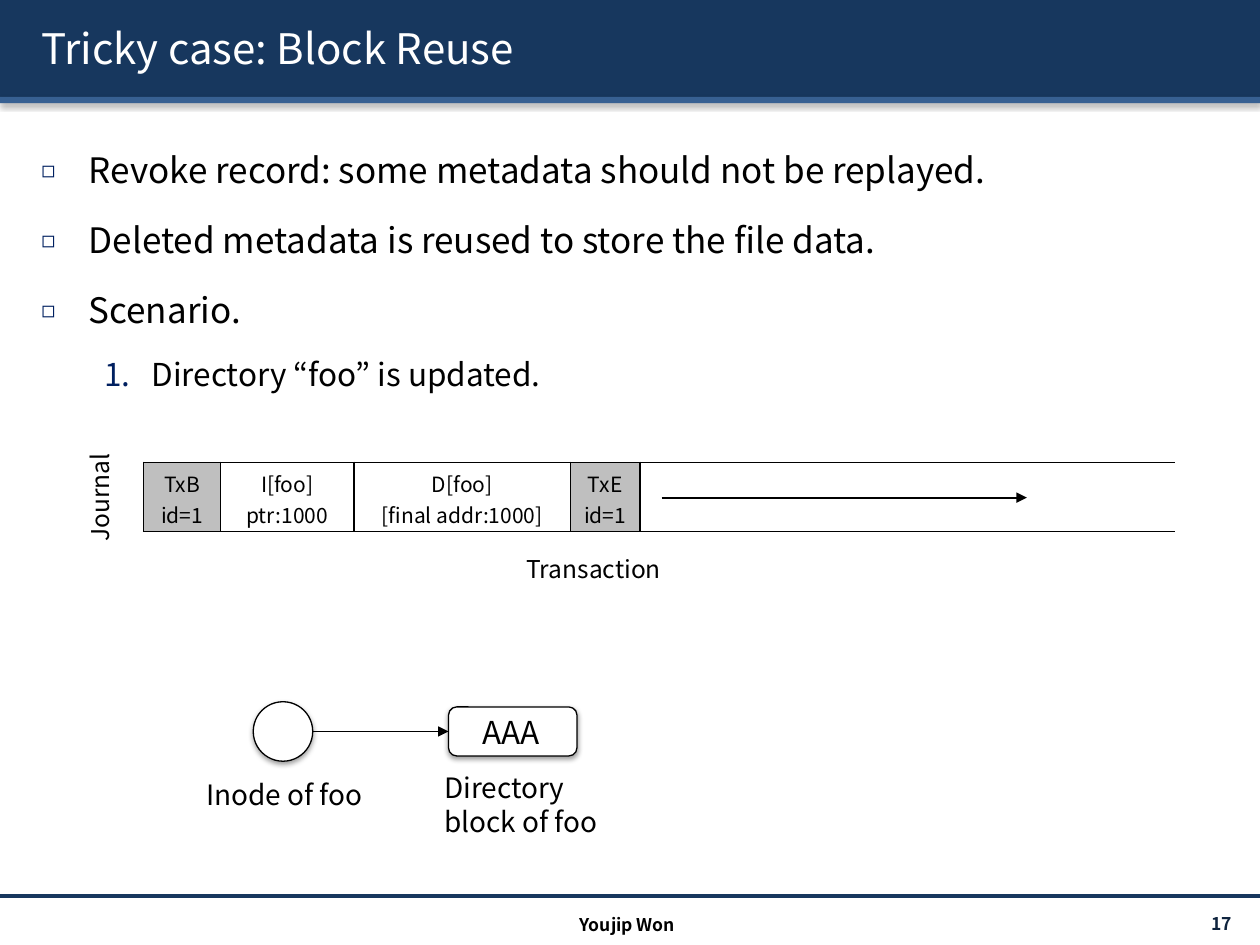
from lxml import etree
from pptx import Presentation
from pptx.dml.color import RGBColor
from pptx.enum import shapes, text
from pptx.oxml import parse_xml
from pptx.oxml.ns import nsdecls, qn
from pptx.util import Pt

FACE = "Noto Sans CJK KR"
HUES = {"navy": "17375E", "blue": "376092", "mark": "002060", "page": "0F243E",
        "gray": "BFBFBF", "white": "FFFFFF", "black": "000000"}
MID = text.MSO_ANCHOR.MIDDLE
CENTER, RIGHT = text.PP_ALIGN.CENTER, text.PP_ALIGN.RIGHT
KIND = shapes.MSO_SHAPE


def hue(name):
    return RGBColor.from_string(HUES[name])


def apply(item, form):
    for key, val in form.items():
        setattr(item, key, val)


def points(box):
    return [Pt(v) for v in box]


def style(para, size, color="black", **form):
    apply(para.font, {"size": Pt(size), "name": FACE, **form})
    para.font.color.rgb = hue(color)


def shadow(node, blur=3.1, dist=1.6, alpha=38):
    node.append(parse_xml(
        f'<a:effectLst {nsdecls("a")}><a:outerShdw blurRad="{Pt(blur)}" dist="{Pt(dist)}" '
        f'dir="5400000" rotWithShape="0"><a:srgbClr val="{HUES["black"]}">'
        f'<a:alpha val="{alpha * 1000}"/></a:srgbClr></a:outerShdw></a:effectLst>'))


def block(slide, kind, box, fill, edge=None):
    shape = slide.shapes.add_shape(kind, *points(box))
    shape.fill.solid()
    shape.fill.fore_color.rgb = hue(fill)
    if edge:
        shape.line.color.rgb = hue(edge)
        shape.line.width = Pt(0.75)
    else:
        shape.line.fill.background()
    shadow(shape._element.spPr)


def line(slide, start, end, color="black", width=1, head=False):
    link = slide.shapes.add_connector(
        shapes.MSO_CONNECTOR.STRAIGHT, *points(start + end))
    link.line.color.rgb = hue(color)
    link.line.width = Pt(width)
    if head:
        etree.SubElement(link.line._get_or_add_ln(), qn("a:tailEnd"), type="triangle")
    etree.SubElement(link._element.spPr, qn("a:effectLst"))


def label(slide, box, words, size, color="black", align=None, anchor=None,
          turn=0, bold=False):
    shape = slide.shapes.add_textbox(*points(box))
    shape.rotation = turn
    apply(shape.text_frame, {"word_wrap": True, "vertical_anchor": anchor})
    para = shape.text_frame.paragraphs[0]
    para.text, para.alignment = words, align
    style(para, size, color, bold=bold)


def bullet(para, number=False):
    props = para._p.get_or_add_pPr()
    props.set("marL", str(Pt(63 if number else 27)))
    props.set("indent", str(Pt(-27)))
    tint = etree.SubElement(props, qn("a:buClr"))
    etree.SubElement(tint, qn("a:srgbClr"), val=HUES["mark"])
    if number:
        etree.SubElement(props, qn("a:buFont"), typeface=FACE)
        etree.SubElement(props, qn("a:buAutoNum"), type="arabicPeriod")
    else:
        etree.SubElement(props, qn("a:buSzPct"), val="65000")
        etree.SubElement(props, qn("a:buFont"), typeface=FACE)
        etree.SubElement(props, qn("a:buChar"), char="◻")


def header(slide, box, words):
    x, y, w, h = box
    block(slide, KIND.RECTANGLE, (x, y, w, h - 3.6), "navy")
    block(slide, KIND.RECTANGLE, (x, y + h - 3.6, w, 3.6), "blue")
    title = slide.shapes.title
    slide.shapes._spTree.append(title._element)  # in front of the bars
    place = points((x + 16.56, y + 4.32, 691.9, 46.1))
    apply(title, dict(zip(("left", "top", "width", "height"), place)))
    title.text_frame.text = words
    title.text_frame.vertical_anchor = MID
    para = title.text_frame.paragraphs[0]
    para.alignment = text.PP_ALIGN.LEFT
    run = para.runs[0]
    style(run, 24, "white")
    props = run._r.get_or_add_rPr()
    shadow(props, 2, 2, 100)
    props.insert(1, props[-1])  # effects stand between fill and font


def points_list(slide, box, items):
    frame = slide.shapes.add_textbox(*points(box)).text_frame
    frame.word_wrap = True
    for i, (words, deep) in enumerate(items):
        para = frame.add_paragraph() if i else frame.paragraphs[0]
        size = 18 if deep else 20
        para.text = words
        apply(para, {"line_spacing": 1.5, "level": int(deep),
                     "space_before": Pt(size * 0.2 if i else 0)})
        bullet(para, deep)
        style(para, size)


def border(cell, sides):
    props = cell._tc.get_or_add_tcPr()
    for i, side in enumerate("LRTB"):
        fill = (f'<a:solidFill><a:srgbClr val="{HUES["black"]}"/></a:solidFill>'
                if side in sides else "<a:noFill/>")
        props.insert(i, parse_xml(
            f'<a:ln{side} {nsdecls("a")} w="{Pt(1)}">{fill}</a:ln{side}>'))


def journal(slide, box, cells):
    x, y, w, h = box
    grid = slide.shapes.add_table(1, len(cells), *points(box)).table
    apply(grid, {"first_row": False, "horz_banding": False})
    grid.rows[0].height = Pt(h)
    for i, (wide, words, fill) in enumerate(cells):
        grid.columns[i].width = Pt(wide)
        cell = grid.cell(0, i)
        cell.text, cell.vertical_anchor = words, MID
        cell.fill.solid()
        cell.fill.fore_color.rgb = hue(fill)
        border(cell, "LRTB" if words else "LTB")
        for para in cell.text_frame.paragraphs:
            para.alignment = CENTER
            style(para, 12)
    line(slide, (x + 296, y + 20.2), (x + 504.7, y + 20.2), head=True)
    label(slide, (x - 58.3, y + 7.9, 67, 24.5), "Journal", 14, align=CENTER, turn=270)
    label(slide, (x + 211.7, y + 49, 103, 24.5), "Transaction", 14)


def diagram(slide, box):
    x, y, w, h = box
    mid = y + 17
    block(slide, KIND.OVAL, (x + 33.8, y, 34, 34), "white", "black")
    block(slide, KIND.ROUNDED_RECTANGLE, (x + 145.4, mid - 14, 73.4, 28),
          "white", "black")
    label(slide, (x, y + 39.6, 113, 26.6), "Inode of foo", 16)
    line(slide, (x + 67.8, mid), (x + 145.4, mid), head=True)
    label(slide, (x + 136, y + 36, 113, 46), "Directory block of foo", 16)
    label(slide, (x + 157.7, y + 2.9, 59.8, 28.8), "AAA", 18)


def footer(slide, box):
    x, y, w, h = box
    line(slide, (x, y), (x + w, y), "navy", 2)
    label(slide, (x + 627, y + 7.2, 84.2, 17.3), "17", 10, "page", RIGHT, MID, bold=True)
    label(slide, (x + 239, y + 6.5, 239, 17.3), "Youjip Won", 10, align=CENTER, bold=True)


def main():
    deck = Presentation()
    apply(deck, {"slide_width": Pt(720), "slide_height": Pt(540)})
    slide = deck.slides.add_slide(deck.slide_layouts[5])
    header(slide, (0, 0, 720, 59), "Tricky case: Block Reuse")
    points_list(slide, (16.56, 69.1, 691.9, 433.4), [
        ("Revoke record: some metadata should not be replayed.", False),
        ("Deleted metadata is reused to store the file data.", False),
        ("Scenario.", False),
        ("Directory “foo” is updated.", True)])
    journal(slide, (82.1, 264.2, 589.7, 39.6), [
        (43.9, "TxB\nid=1", "gray"), (76.3, "I[foo]\nptr:1000", "white"),
        (123.8, "D[foo]\n[final addr:1000]", "white"),
        (39.6, "TxE\nid=1", "gray"), (306, "", "white")])
    diagram(slide, (110.9, 401, 249, 82))
    footer(slide, (0, 512, 720, 28))
    deck.save("out.pptx")


if __name__ == "__main__":
    main()
